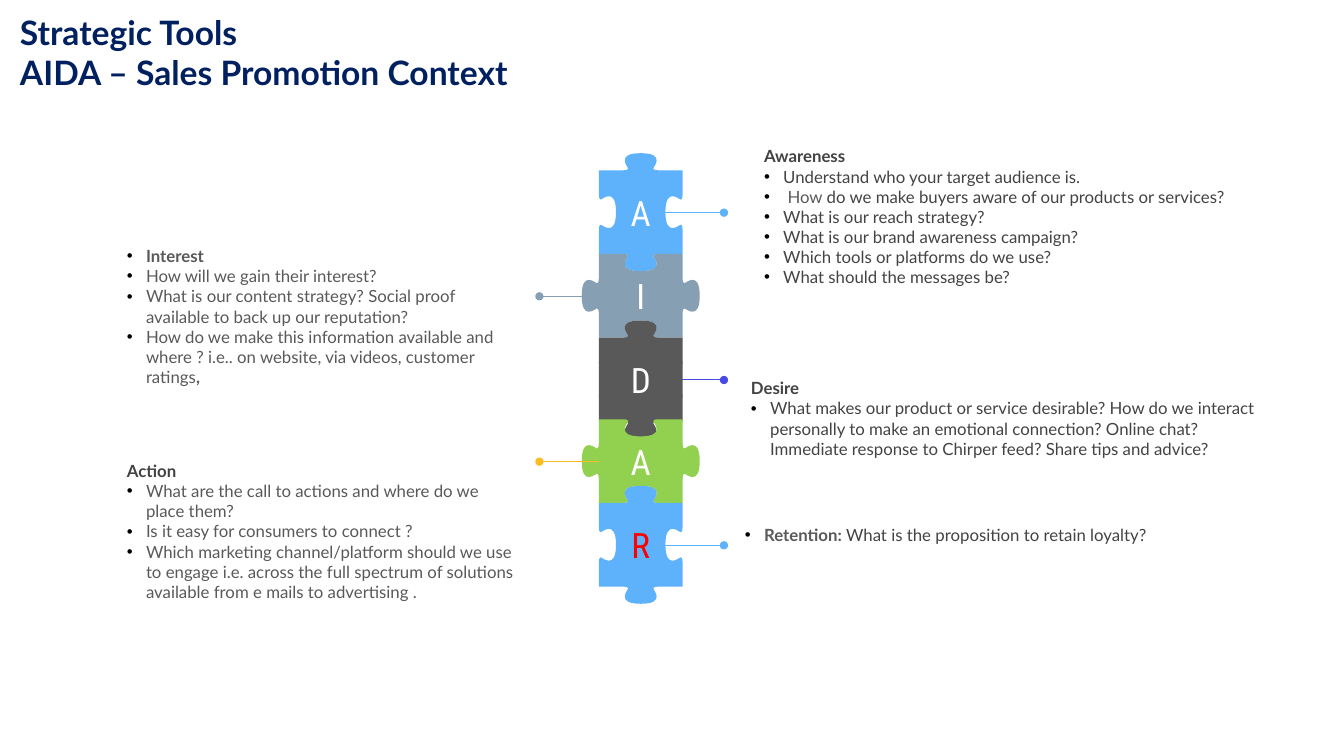
from dataclasses import dataclass

from lxml.etree import SubElement
from pptx import Presentation
from pptx.dml.color import RGBColor
from pptx.enum.shapes import MSO_CONNECTOR as Connector, MSO_SHAPE as Preset
from pptx.enum.text import MSO_ANCHOR as Anchor, MSO_AUTO_SIZE as AutoSize, PP_ALIGN as Align
from pptx.oxml.ns import qn
from pptx.util import Pt

PX = 9144  # EMU in one px, 100 px to the inch
COLOURS = {
    "navy": "002060", "dark": "434343", "grey": "595959", "black": "000000",
    "white": "FFFFFF", "red": "FF0000", "blue": "5EB2FC", "steel": "869FB2",
    "green": "92D050", "violet": "4949E7", "amber": "FCBD24",
}

# Puzzle geometry
SIDE = 83
PIECE_LEFT = 594
LINE_LENGTH = 59
# Half an edge as (distance along, distance outward): a corner, the knob's start, two curves
HALF_EDGE = [(0, 0), (24, 0), (25, 0), (29, 0), (29, 2), (29, 3), (16, 17), (SIDE / 2, 17)]
INDENT = 19


@dataclass
class Span:
    text: str
    colour: str
    bold: bool = False


@dataclass
class Para:
    spans: list[Span]
    bullet: bool = True


@dataclass
class Note:
    left: int
    top: int
    width: int
    height: int
    paras: list[Para]
    size: int = 12
    inset: int = 10
    grow: bool = False


@dataclass
class Piece:
    letter: str
    top: int
    fill: str
    line: str
    knobs_upright: bool
    letter_colour: str = "white"
    plate: bool = False


def heading(text: str, colour: str = "dark", bullet: bool = False) -> Para:
    return Para([Span(text, colour, True)], bullet)


def point(text: str, colour: str = "dark") -> Para:
    return Para([Span(text, colour)])


NOTES = [
    Note(735, 365, 536, 58, [
        heading("Desire"),
        point("What makes our product or service desirable? How do we interact personally to make "
              "an emotional connection? Online chat? Immediate response to Chirper feed? "
              "Share tips and advice?"),
    ]),
    Note(748, 135, 536, 58, [
        heading("Awareness"),
        point("Understand who your target audience is."),
        Para([Span(" How ", "grey"),
              Span("do we make buyers aware of our products or services?", "dark")]),
        point("What is our reach strategy?"),
        point("What is our brand awareness campaign?"),
        point("Which tools or platforms do we use?"),
        point("What should the messages be?"),
    ]),
    Note(116, 239, 402, 58, [
        heading("Interest", "grey", bullet=True),
        point("How will we gain their interest?", "grey"),
        point("What is our content strategy? Social proof available to back up our reputation?",
              "grey"),
        Para([Span("How do we make this information available and where ? i.e.. on website, "
                   "via videos, customer ratings", "grey"), Span(",", "grey", True)]),
    ], inset=5, grow=True),
    Note(116, 447, 411, 58, [
        heading("Action"),
        point("What are the call to actions and where do we place them?", "grey"),
        point("Is it easy for consumers to connect ?", "grey"),
        point("Which marketing channel/platform should we use to engage i.e. across the full "
              "spectrum of solutions available from e mails to advertising .", "grey"),
    ]),
    Note(729, 516, 536, 50, [
        Para([Span("Retention: ", "grey", True),
              Span("What is the proposition to retain loyalty?", "dark")]),
    ], inset=5, grow=True),
    Note(10, 7, 1053, 91, [
        heading("Strategic Tools", "navy"),
        heading("AIDA – Sales Promotion Context", "navy"),
    ], size=24, inset=5, grow=True),
]

PIECES = [
    Piece("A", 169, "blue", "blue", True),
    Piece("I", 252, "steel", "steel", False),
    Piece("D", 335, "grey", "violet", True, plate=True),
    Piece("A", 416, "green", "amber", False, plate=True),
    Piece("R", 499, "blue", "blue", True, letter_colour="red"),
]


def rgb(name: str) -> RGBColor:
    return RGBColor.from_string(COLOURS[name])


def add_bullet(para) -> None:
    props = para._p.get_or_add_pPr()
    props.set("marL", str(INDENT * PX))
    props.set("indent", str(-INDENT * PX))
    colour = SubElement(props, qn("a:buClr"))
    SubElement(colour, qn("a:srgbClr"), val=COLOURS["black"])
    SubElement(props, qn("a:buFont"), typeface="Arial")
    SubElement(props, qn("a:buChar"), char="•")


def write(box, paras: list[Para], *, size: int, font: str = "Lato", inset: int = 10,
          align=Align.LEFT, anchor=Anchor.TOP, grow: bool = False) -> None:
    frame = box.text_frame
    frame.word_wrap = True
    frame.auto_size = AutoSize.SHAPE_TO_FIT_TEXT if grow else AutoSize.NONE
    frame.vertical_anchor = anchor
    frame.margin_left = frame.margin_right = 10 * PX
    frame.margin_top = frame.margin_bottom = inset * PX
    for index, content in enumerate(paras):
        para = frame.add_paragraph() if index else frame.paragraphs[0]
        para.alignment = align
        if content.bullet:
            add_bullet(para)
        for span in content.spans:
            run = para.add_run()
            run.text = span.text
            run.font.name = font
            run.font.size = Pt(size)
            run.font.bold = span.bold
            run.font.color.rgb = rgb(span.colour)


def piece_edges(piece: Piece) -> list[list[tuple[int, int]]]:
    # The far half mirrors the near one; its last corner belongs to the next edge
    edge = HALF_EDGE + [(SIDE - along, out) for along, out in HALF_EDGE[-2:0:-1]]
    edges = []
    for turn in range(4):  # top, right, bottom, left
        sign = 1 if (turn % 2 == 0) == piece.knobs_upright else -1
        points = []
        for along, out in edge:
            x, y = along - SIDE / 2, -SIDE / 2 - sign * out
            for _ in range(turn):
                x, y = -y, x
            points.append((round((PIECE_LEFT + SIDE / 2 + x) * PX),
                           round((piece.top + SIDE / 2 + y) * PX)))
        edges.append(points)
    return edges


def draw_body(shapes, piece: Piece):
    edges = piece_edges(piece)
    start, *rest = sum(edges, [])
    builder = shapes.build_freeform(*start, scale=1.0)
    builder.add_line_segments(rest, close=True)
    body = builder.convert_to_shape()
    # Each edge holds a corner, the knob's start and then three points per curve
    outline = next(body._element.iter(qn("a:path")))
    steps, length = list(outline), len(edges[0])
    for first in range(0, len(edges) * length, length):
        for at in range(first + 2, first + length, 3):
            steps[at].tag = qn("a:cubicBezTo")
            for extra in steps[at + 1:at + 3]:
                steps[at].append(extra[0])
                outline.remove(extra)
    return body


def fill_plain(shape, colour: str) -> None:
    shape.shadow.inherit = False
    shape.fill.solid()
    shape.fill.fore_color.rgb = rgb(colour)
    shape.line.fill.background()


def draw_piece(page, piece: Piece) -> None:
    shapes = page.shapes.add_group_shape().shapes
    fill_plain(draw_body(shapes, piece), piece.fill)
    # Pointer with a dot at its outer end
    left = 659 if piece.knobs_upright else 535
    middle = (piece.top + 42) * PX
    pointer = shapes.add_connector(Connector.STRAIGHT, left * PX, middle,
                                   (left + LINE_LENGTH) * PX, middle)
    pointer.line.color.rgb = rgb(piece.line)
    pointer.line.width = Pt(0.75)
    dot_end = "a:tailEnd" if piece.knobs_upright else "a:headEnd"
    SubElement(pointer.line._get_or_add_ln(), qn(dot_end), type="oval")
    SubElement(pointer._element.spPr, qn("a:effectLst"))
    # Letter
    area = [PIECE_LEFT * PX, (piece.top + 24) * PX, SIDE * PX, 35 * PX]
    if piece.plate:
        letter = shapes.add_shape(Preset.RECTANGLE, *area)
        fill_plain(letter, piece.fill)
    else:
        letter = shapes.add_textbox(*area)
    write(letter, [Para([Span(piece.letter, piece.letter_colour)], bullet=False)], size=25,
          font="Roboto Condensed", align=Align.CENTER, anchor=Anchor.MIDDLE)


def main() -> None:
    deck = Presentation()
    deck.slide_width, deck.slide_height = 1333 * PX, 750 * PX
    page = deck.slides.add_slide(deck.slide_layouts[6])
    for piece in PIECES:
        draw_piece(page, piece)
    for note in NOTES:
        area = (note.left, note.top, note.width, note.height)
        box = page.shapes.add_textbox(*(length * PX for length in area))
        write(box, note.paras, size=note.size, inset=note.inset, grow=note.grow)
    deck.save("out.pptx")


if __name__ == "__main__":
    main()
